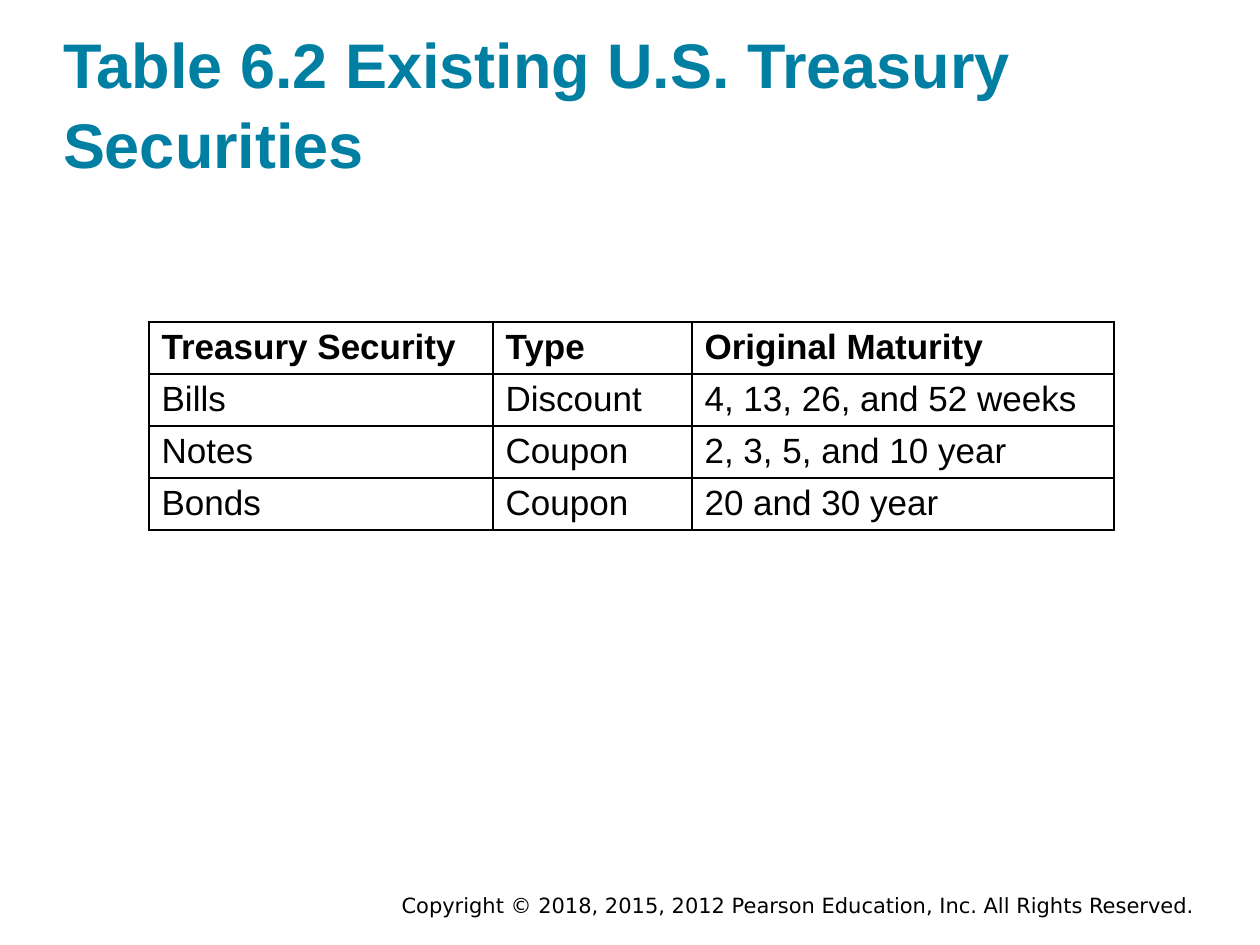
from lxml import etree
from pptx import Presentation
from pptx import util as u
from pptx.dml.color import RGBColor
from pptx.enum import text
from pptx.oxml.ns import qn

TEAL = RGBColor(0x00, 0x7F, 0xA3)
BLACK = RGBColor(0x00, 0x00, 0x00)
WHITE = RGBColor(0xFF, 0xFF, 0xFF)
SCALE = u.Inches(1) / 126
COLUMN_WIDTHS = [344, 199, 422]
ROW_HEIGHT = 52
ROWS = [
    ["Treasury Security", "Type", "Original Maturity"],
    ["Bills", "Discount", "4, 13, 26, and 52 weeks"],
    ["Notes", "Coupon", "2, 3, 5, and 10 year"],
    ["Bonds", "Coupon", "20 and 30 year"],
]


def px(*lengths):
    return [u.Emu(round(length * SCALE)) for length in lengths]


def write(frame, words, color, align=text.PP_ALIGN.LEFT, **formats):
    para = frame.paragraphs[0]
    para.alignment = align
    span = para.add_run()
    span.text = words
    span.font.color.rgb = color
    for name, value in formats.items():
        setattr(span.font, name, value)
    return para


deck = Presentation()
deck.slide_width, deck.slide_height = px(1260, 945)
page = deck.slides.add_slide(deck.slide_layouts[5])

title = page.shapes.title
title.left, title.top, title.width, title.height = px(63, 30, 1134, 151)
frame = title.text_frame
title_format = {
    "margin_left": 0, "margin_right": 0, "margin_top": 0, "margin_bottom": 0,
    "word_wrap": True, "auto_size": text.MSO_AUTO_SIZE.NONE,
    "vertical_anchor": text.MSO_ANCHOR.BOTTOM,
}
for name, value in title_format.items():
    setattr(frame, name, value)
para = write(frame, "Table 6.2 Existing U.S. Treasury Securities", TEAL,
             name="Arial", size=u.Pt(36), bold=True)
para.line_spacing = 1.05

table_size = sum(COLUMN_WIDTHS), ROW_HEIGHT * len(ROWS)
table = page.shapes.add_table(len(ROWS), len(COLUMN_WIDTHS),
                              *px(149, 322, *table_size)).table
for column, width in zip(table.columns, px(*COLUMN_WIDTHS)):
    column.width = width

for row_number, words_in_row in enumerate(ROWS):
    table.rows[row_number].height = px(ROW_HEIGHT)[0]
    for column_number, words in enumerate(words_in_row):
        cell = table.cell(row_number, column_number)
        write(cell.text_frame, words, BLACK,
              name="Arial", size=u.Pt(20), bold=row_number == 0)
        properties = cell._tc.get_or_add_tcPr()
        for side in ("lnL", "lnR", "lnT", "lnB"):
            border = etree.SubElement(properties, qn(f"a:{side}"), w=str(u.Pt(1)))
            paint = etree.SubElement(border, qn("a:solidFill"))
            etree.SubElement(paint, qn("a:srgbClr"), val=str(BLACK))
        cell.fill.solid()
        cell.fill.fore_color.rgb = WHITE

footer = page.shapes.add_textbox(*px(220, 886, 987, 38))
footer.text_frame.word_wrap = True
write(footer.text_frame,
      "Copyright © 2018, 2015, 2012 Pearson Education, Inc. All Rights Reserved.",
      BLACK, text.PP_ALIGN.RIGHT, name="DejaVu Sans", size=u.Pt(12))

deck.save("out.pptx")
